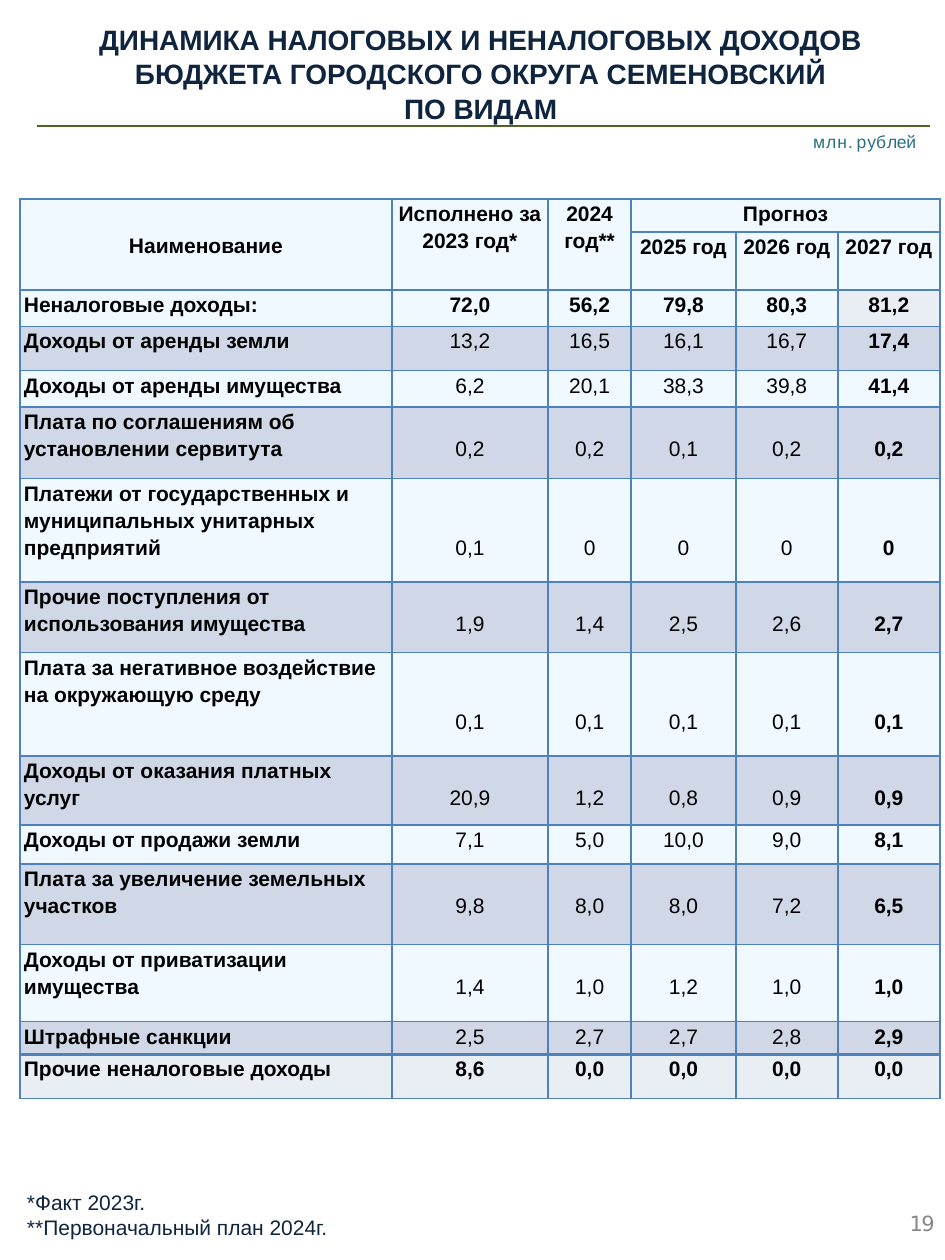
"""Build the slide on non-tax revenue of the district budget."""
from lxml import etree
from pptx import Presentation
from pptx.dml.color import RGBColor
from pptx.enum.shapes import MSO_CONNECTOR
from pptx.enum.text import MSO_ANCHOR, PP_ALIGN
from pptx.oxml.ns import qn
from pptx.util import Inches, Pt

LEFT, CENTER, RIGHT = PP_ALIGN.LEFT, PP_ALIGN.CENTER, PP_ALIGN.RIGHT
TOP, MIDDLE = MSO_ANCHOR.TOP, MSO_ANCHOR.MIDDLE
STRAIGHT = MSO_CONNECTOR.STRAIGHT

NAVY = RGBColor(0x0F, 0x24, 0x3E)
BLACK = RGBColor(0, 0, 0)
TEAL = RGBColor(0x29, 0x70, 0x83)
GRAY = RGBColor(0x88, 0x88, 0x88)
OLIVE = RGBColor(0x4F, 0x62, 0x28)
BORDER = RGBColor(0x4F, 0x81, 0xBD)
PALE = RGBColor(0xEF, 0xF9, 0xFF)
BAND = RGBColor(0xD0, 0xD8, 0xE8)
TOTAL = RGBColor(0xE9, 0xED, 0xF4)

COLS, ROWS = 75, 100
LINE = 2.14
COL_WIDTHS = [29.5, 12.4, 6.6, 8.3, 8.1, 8.1]
HEAD_HEIGHTS = [2.6, 4.6]
HEADINGS = [
    (0, 0, 1, 0, ["Наименование"]),
    (0, 1, 1, 1, ["Исполнено за", "2023 год*"]),
    (0, 2, 1, 2, ["2024", "год**"]),
    (0, 3, 0, 5, ["Прогноз"]),
    (1, 3, 1, 3, ["2025 год"]),
    (1, 4, 1, 4, ["2026 год"]),
    (1, 5, 1, 5, ["2027 год"]),
]
# name, row height, lines the values are lowered by, values
REVENUES = [
    ("Неналоговые доходы:", 2.9, 0, "72,0 56,2 79,8 80,3 81,2"),
    ("Доходы от аренды земли", 3.5, 0, "13,2 16,5 16,1 16,7 17,4"),
    ("Доходы от аренды имущества", 2.9, 0, "6,2 20,1 38,3 39,8 41,4"),
    ("Плата по соглашениям об установлении сервитута", 5.7, 1, "0,2 0,2 0,1 0,2 0,2"),
    ("Платежи от государственных и муниципальных унитарных предприятий", 8.2, 2,
     "0,1 0 0 0 0"),
    ("Прочие поступления от использования имущества", 5.6, 1, "1,9 1,4 2,5 2,6 2,7"),
    ("Плата за негативное воздействие на окружающую среду", 8.2, 2,
     "0,1 0,1 0,1 0,1 0,1"),
    ("Доходы от оказания платных услуг", 5.5, 1, "20,9 1,2 0,8 0,9 0,9"),
    ("Доходы от продажи земли", 3.1, 0, "7,1 5,0 10,0 9,0 8,1"),
    ("Плата за увеличение земельных участков", 6.4, 1, "9,8 8,0 8,0 7,2 6,5"),
    ("Доходы от приватизации имущества", 6.1, 1, "1,4 1,0 1,2 1,0 1,0"),
    ("Штрафные санкции", 2.6, 0, "2,5 2,7 2,7 2,8 2,9"),
    ("Прочие неналоговые доходы", 3.5, 0, "8,6 0,0 0,0 0,0 0,0"),
]
UNIT_RUNS = [("млн", 0.6), (". ", -0.6), ("р", 0.6), ("у", -0.7), ("б", 0.6), ("лей", -0.2)]


def write(tf, paragraphs, size=12, color=BLACK, bold=False, font="Arial", align=LEFT,
          before=0, spacing=None, margin=0, indent=0):
    """Fill a text frame with paragraphs, each a string or a list of (text, tracking)."""
    for i, runs in enumerate(paragraphs):
        p = tf.paragraphs[0] if i == 0 else tf.add_paragraph()
        p.alignment, p.space_before, p.line_spacing = align, Pt(before), spacing
        pPr = p._p.get_or_add_pPr()
        pPr.set("marL", str(Inches(margin)))
        pPr.set("indent", str(Inches(indent)))
        for text, tracking in [(runs, 0)] if isinstance(runs, str) else runs:
            r = p.add_run()
            r.text = text
            r.font.size, r.font.bold, r.font.name = Pt(size), bold, font
            r.font.color.rgb = color
            if tracking:
                r._r.get_or_add_rPr().set("spc", str(round(tracking * 100)))


class Deck:
    """Holds the presentation, its grid and the current slide."""

    def __init__(self):
        self.prs = Presentation()
        self.prs.slide_width, self.prs.slide_height = Inches(7.5), Inches(10)
        self.s = self.prs.slides.add_slide(self.prs.slide_layouts[6])

    def x(self, cols):
        return round(self.prs.slide_width * cols / COLS)

    def y(self, rows):
        return round(self.prs.slide_height * rows / ROWS)

    def text(self, left, top, width, height, paragraphs, insets=(0, 0), **style):
        sp = self.s.shapes.add_textbox(self.x(left), self.y(top), self.x(width), self.y(height))
        tf = sp.text_frame
        tf.word_wrap = True
        tf.margin_left = tf.margin_right = self.x(insets[0])
        tf.margin_top, tf.margin_bottom = self.y(insets[1]), 0
        write(tf, paragraphs, **style)

    def rule(self, left, top, width):
        line = self.s.shapes.add_connector(
            STRAIGHT, self.x(left), self.y(top), self.x(left + width), self.y(top))
        line.line.color.rgb, line.line.width = OLIVE, Pt(0.75)
        etree.SubElement(line._element.spPr, qn("a:effectLst"))

    def table(self, left, top, widths, heights):
        frame = self.s.shapes.add_table(
            len(heights), len(widths), self.x(left), self.y(top),
            self.x(sum(widths)), self.y(sum(heights)))
        table = frame.table
        table.first_row = table.horz_banding = False
        for col, width in zip(table.columns, widths):
            col.width = self.x(width)
        for row, height in zip(table.rows, heights):
            row.height = self.y(height)
        return table

    def cell(self, cell, paragraphs, fill, drop=0, anchor=TOP, top_line=1, **style):
        cell.margin_left = cell.margin_right = self.x(0.3)
        cell.margin_top, cell.margin_bottom = self.y(drop * LINE), 0
        cell.vertical_anchor = anchor
        for side in "LRTB":
            width = Pt(top_line if side == "T" else 1)
            ln = etree.SubElement(cell._tc.get_or_add_tcPr(), qn("a:ln" + side), w=str(width))
            solid = etree.SubElement(ln, qn("a:solidFill"))
            etree.SubElement(solid, qn("a:srgbClr"), val=str(BORDER))
        cell.fill.solid()
        cell.fill.fore_color.rgb = fill
        write(cell.text_frame, paragraphs, spacing=1.15, **style)


def add_revenue_table(deck):
    """Add the table of revenues by kind and year."""
    table = deck.table(1.6, 15.8, COL_WIDTHS, HEAD_HEIGHTS + [item[1] for item in REVENUES])
    for row in range(2):
        for col in range(len(COL_WIDTHS)):
            deck.cell(table.cell(row, col), [], PALE)
    for row, col, last_row, last_col, lines in HEADINGS:
        cell = table.cell(row, col)
        if (row, col) != (last_row, last_col):
            cell.merge(table.cell(last_row, last_col))
        cell.vertical_anchor = MIDDLE if col == 0 else TOP
        write(cell.text_frame, lines, bold=True, align=CENTER, spacing=1.15)
    last = len(REVENUES) - 1
    for i, (name, _, drop, values) in enumerate(REVENUES):
        fill = TOTAL if i == last else (PALE, BAND)[i % 2]
        top_line = 2 if i == last else 1
        deck.cell(table.cell(i + 2, 0), [name], fill, top_line=top_line, bold=True)
        for col, value in enumerate(values.split(), 1):
            deck.cell(table.cell(i + 2, col), [value], TOTAL if (i, col) == (0, 5) else fill,
                      drop=drop, top_line=top_line, bold=i in (0, last) or col == 5,
                      align=CENTER)


def main():
    """Build and save the slide."""
    deck = Deck()
    deck.text(2.6, 1.7, 71, 8.4,
              ["ДИНАМИКА НАЛОГОВЫХ И НЕНАЛОГОВЫХ ДОХОДОВ БЮДЖЕТА ГОРОДСКОГО ОКРУГА СЕМЕНОВСКИЙ",
               "ПО ВИДАМ"],
              insets=(0, 0.1), size=16, color=NAVY, bold=True, align=CENTER, before=1,
              margin=0.01)
    deck.rule(2.9, 10, 70.9)
    add_revenue_table(deck)
    deck.text(-4.2, 93.9, 61.3, 5, [" *Факт 2023г.", " **Первоначальный план 2024г."],
              insets=(1, 0.5), color=NAVY, indent=0.49)
    deck.text(61.8, 9.6, 10.9, 2.4, [UNIT_RUNS], insets=(0, 0.8), size=10, color=TEAL,
              align=RIGHT, before=5.5, margin=0.01)
    deck.text(71.6, 96.1, 3.1, 2.5, [[("19", -1)]], color=GRAY, font="DejaVu Sans",
              before=1.6, margin=0.06)
    deck.prs.save("out.pptx")


if __name__ == "__main__":
    main()
